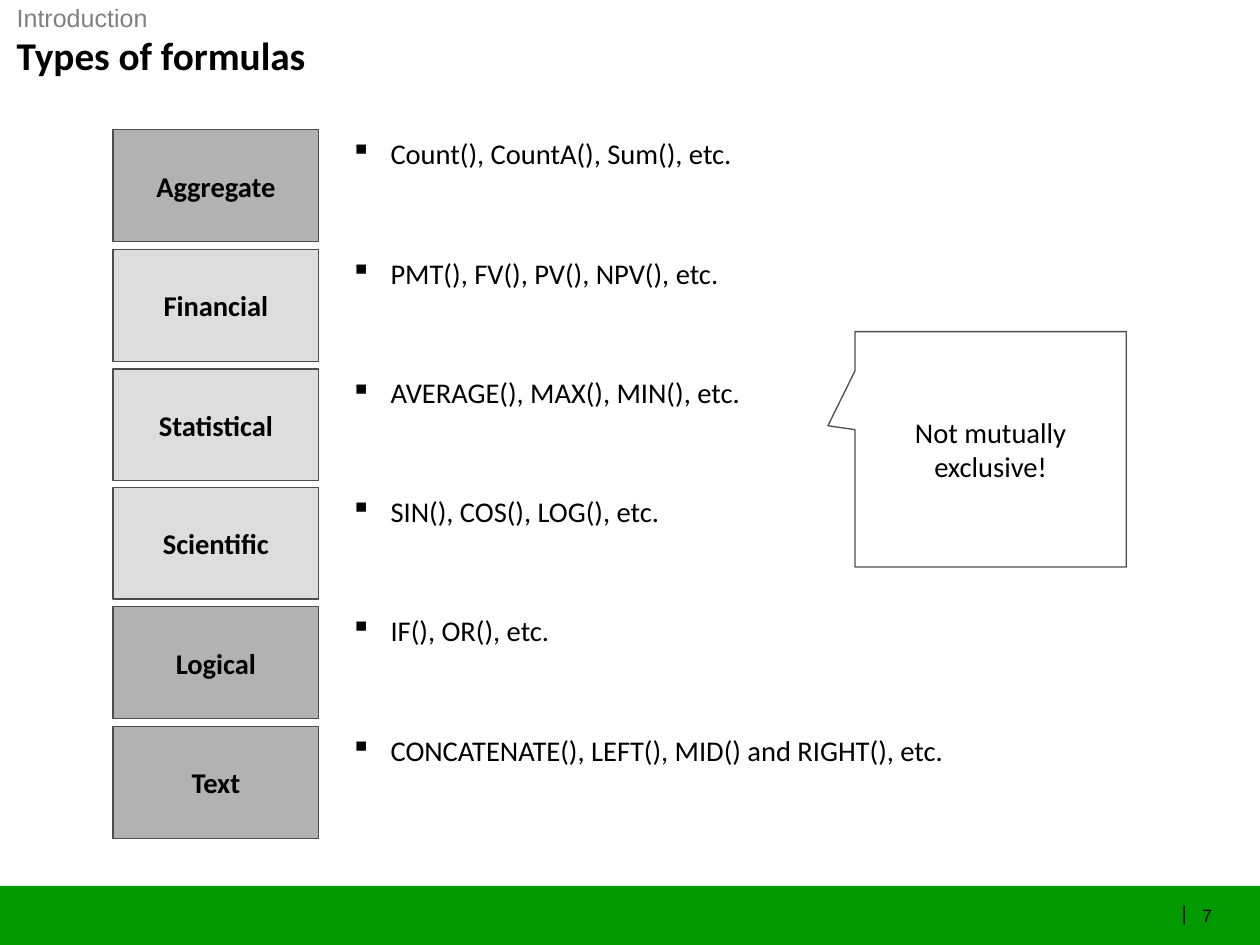
"""Builds the slide on types of spreadsheet formulas."""
from dataclasses import dataclass

from lxml import etree
from pptx import Presentation
from pptx import util as u
from pptx.dml import color
from pptx.enum import shapes, text
from pptx.oxml import ns


@dataclass(frozen=True)
class Theme:
    """Holds the colours, fonts and type sizes."""
    black: str = "000000"
    grey: str = "808080"
    outline: str = "4D4D4D"
    dark: str = "B2B2B2"
    light: str = "DDDDDD"
    green: str = "009900"
    body_font: str = "Calibri"
    label_font: str = "Arial"
    title_size: int = 22
    body_size: int = 16
    section_size: int = 14
    divider_size: int = 12
    number_size: int = 10


THEME = Theme()
PX = u.Inches(1) // 100
LEFT, CENTER, RIGHT = text.PP_ALIGN.LEFT, text.PP_ALIGN.CENTER, text.PP_ALIGN.RIGHT
TOP, MIDDLE = text.MSO_ANCHOR.TOP, text.MSO_ANCHOR.MIDDLE


def px(*lengths):
    """Turns px into EMU."""
    return [u.Emu(length * PX) for length in lengths]


def write(shape, words, size=THEME.body_size, font=THEME.body_font, ink=THEME.black,
          bold=False, align=LEFT, anchor=TOP, inset=(10, 5), wrap=True, bullet=None):
    """Puts one formatted paragraph into a shape."""
    frame = shape.text_frame
    frame.word_wrap = wrap
    frame.auto_size = text.MSO_AUTO_SIZE.NONE
    frame.vertical_anchor = anchor
    frame.margin_left, frame.margin_top = px(*inset)
    frame.margin_right, frame.margin_bottom = px(*inset)
    frame.text = words
    paragraph = frame.paragraphs[0]
    paragraph.alignment = align
    paragraph.space_before = u.Pt(0)
    if bullet:
        properties = paragraph.font._element.getparent()
        hang, = px(31)
        properties.set("marL", str(hang))
        properties.set("indent", str(-hang))
        mark = etree.Element(ns.qn("a:buChar"), char=bullet)
        properties.insert(properties.index(paragraph.font._element), mark)
    run = paragraph.runs[0]
    run.font.size = u.Pt(size)
    run.font.name = font
    run.font.bold = bold
    run.font.color.rgb = color.RGBColor.from_string(ink)


class SlideBuilder:
    """Draws styled elements on the current slide."""

    def __init__(self, presentation):
        """Adds a title-only slide."""
        self.slide = presentation.slides.add_slide(presentation.slide_layouts[5])

    def title(self, words, *box):
        """Places and formats the title."""
        shape = self.slide.shapes.title
        shape.left, shape.top, shape.width, shape.height = px(*box)
        write(shape, words, size=THEME.title_size, bold=True, inset=(0, 0))

    def label(self, words, *box, **style):
        """Adds a text box."""
        write(self.slide.shapes.add_textbox(*px(*box)), words, **style)

    def block(self, *box, kind=shapes.MSO_SHAPE.RECTANGLE, fill=None, line=None):
        """Adds a preset shape."""
        shape = self.slide.shapes.add_shape(kind, *px(*box))
        shape.shadow.inherit = False
        if fill:
            shape.fill.solid()
            shape.fill.fore_color.rgb = color.RGBColor.from_string(fill)
        else:
            shape.fill.background()
        if line:
            shape.line.color.rgb = color.RGBColor.from_string(line)
            shape.line.width = u.Pt(0.75)
        else:
            shape.line.fill.background()
        return shape

    def category(self, name, examples, fill, top):
        """Adds a category box and its bulleted examples."""
        box = self.block(88, top, 160, 87, fill=fill, line=THEME.outline)
        write(box, name, bold=True, align=CENTER, anchor=MIDDLE)
        self.label(examples, 263, top, 490, 37, bullet="▪")

    def callout(self, words, *box, tip):
        """Adds a callout whose pointer ends at the tip."""
        shape = self.block(*box, kind=shapes.MSO_SHAPE.RECTANGULAR_CALLOUT,
                           line=THEME.outline)
        shape.adjustments[0], shape.adjustments[1] = tip
        write(shape, words, align=CENTER, anchor=MIDDLE)

    def footer(self, number):
        """Adds the green bar with the page number."""
        self.block(0, 689, 980, 46, fill=THEME.green)
        self.label("|", 921, 700, 4, 20, size=THEME.divider_size, align=RIGHT,
                   anchor=MIDDLE, inset=(0, 0), wrap=False)
        self.label(number, 935, 704, 23, 17, size=THEME.number_size,
                   font=THEME.label_font, inset=(0, 0), wrap=False)


CATEGORIES = [
    ("Aggregate", "Count(), CountA(), Sum(), etc.", THEME.dark),
    ("Financial", "PMT(), FV(), PV(), NPV(), etc.", THEME.light),
    ("Statistical", "AVERAGE(), MAX(), MIN(), etc.", THEME.light),
    ("Scientific", "SIN(), COS(), LOG(), etc.", THEME.light),
    ("Logical", "IF(), OR(), etc.", THEME.dark),
    ("Text", "CONCATENATE(), LEFT(), MID() and RIGHT(), etc.", THEME.dark),
]


def main():
    """Builds and saves the presentation."""
    presentation = Presentation()
    presentation.slide_width, presentation.slide_height = px(980, 735)
    builder = SlideBuilder(presentation)
    builder.footer("7")
    builder.title("Types of formulas", 13, 24, 943, 37)
    builder.label("Introduction", 13, 2, 400, 24, size=THEME.section_size,
                  font=THEME.label_font, ink=THEME.grey, inset=(0, 0))
    first_top, last_top = 101, 565
    for index, (name, examples, fill) in enumerate(CATEGORIES):
        top = first_top + round(index * (last_top - first_top) / (len(CATEGORIES) - 1))
        builder.category(name, examples, fill, top)
    builder.callout("Not mutually exclusive!", 665, 258, 211, 183, tip=(-0.6, -0.1))
    presentation.save("out.pptx")


if __name__ == "__main__":
    main()
